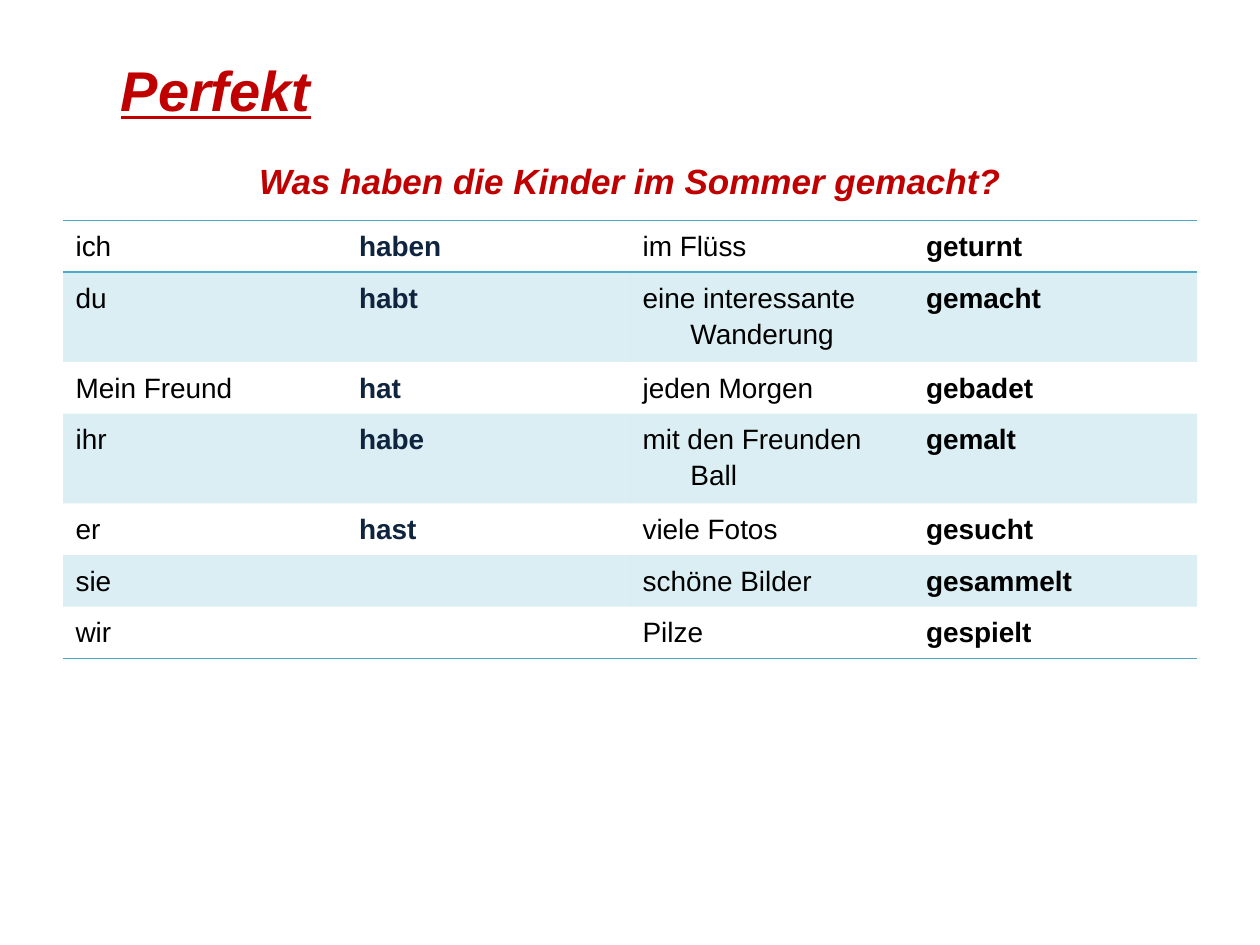
"""Build a slide on the German Perfekt with a sentence-building table."""
from lxml import etree
from pptx import Presentation
from pptx.dml.color import RGBColor
from pptx.enum.text import MSO_ANCHOR, PP_ALIGN
from pptx.oxml.ns import qn
from pptx.util import Inches, Pt

BOTTOM = MSO_ANCHOR.BOTTOM
CENTER = PP_ALIGN.CENTER
RED, BLACK, NAVY, TEAL = "C00000", "000000", "0F243E", "4BACC6"
NO_STYLE = "{2D5ABB26-0587-4C30-8999-92F81FD0307C}"
ROWS = [
    ("ich", "haben", "im Flüss", "geturnt"),
    ("du", "habt", "eine interessante Wanderung", "gemacht"),
    ("Mein Freund", "hat", "jeden Morgen", "gebadet"),
    ("ihr", "habe", "mit den Freunden Ball", "gemalt"),
    ("er", "hast", "viele Fotos", "gesucht"),
    ("sie", "", "schöne Bilder", "gesammelt"),
    ("wir", "", "Pilze", "gespielt"),
]


def set_font(p, size, color, bold=False, italic=False):
    p.font.name = "Arial"
    p.font.size = Pt(size)
    p.font.bold = bold
    p.font.italic = italic
    p.font.color.rgb = RGBColor.from_string(color)


def add_border(cell, side):
    ln = etree.SubElement(cell._tc.get_or_add_tcPr(), qn(f"a:{side}"), w=str(Pt(1)))
    fill = etree.SubElement(ln, qn("a:solidFill"))
    etree.SubElement(fill, qn("a:srgbClr"), val=TEAL)


prs = Presentation()
prs.slide_width, prs.slide_height = Inches(10), Inches(7.5)
s = prs.slides.add_slide(prs.slide_layouts[6])

question = s.shapes.add_textbox(Inches(0.5), Inches(0.35), Inches(9), Inches(1.25))
tf = question.text_frame
tf.word_wrap = True
tf.vertical_anchor = BOTTOM
tf.margin_bottom = 0
p = tf.paragraphs[0]
p.text = "Was haben die Kinder im Sommer gemacht?"
p.alignment = CENTER
set_font(p, 20, RED, bold=True, italic=True)

table = s.shapes.add_table(len(ROWS), 4, Inches(0.5), Inches(1.75), Inches(9), Inches(2.87)).table
table.first_row = False
table.horz_banding = False
table._tbl.tblPr.find(qn("a:tableStyleId")).text = NO_STYLE
for i, words in enumerate(ROWS):
    table.rows[i].height = Inches(0.41)
    for j, word in enumerate(words):
        cell = table.cell(i, j)
        p = cell.text_frame.paragraphs[0]
        p.text = word
        p.line_spacing = 1.15
        pPr = p._p.get_or_add_pPr()
        pPr.set("marL", str(Inches(0.38)))
        pPr.set("indent", str(-Inches(0.38)))
        set_font(p, 16, NAVY if j == 1 else BLACK, bold=j in (1, 3))
        if i == 0:
            add_border(cell, "lnT")
        if i in (0, len(ROWS) - 1):
            add_border(cell, "lnB")
        if i % 2:
            cell.fill.solid()
            cell.fill.fore_color.rgb = RGBColor.from_string(TEAL)
            color = cell._tc.tcPr.find(qn("a:solidFill")).find(qn("a:srgbClr"))
            etree.SubElement(color, qn("a:alpha"), val="20000")
        else:
            cell.fill.background()

title = s.shapes.add_textbox(Inches(0.86), Inches(0.39), Inches(1.72), Inches(0.64))
tf = title.text_frame
tf.word_wrap = False
p = tf.paragraphs[0]
p.text = "Perfekt"
set_font(p, 32, RED, bold=True, italic=True)
p.font.underline = True

prs.save("out.pptx")
